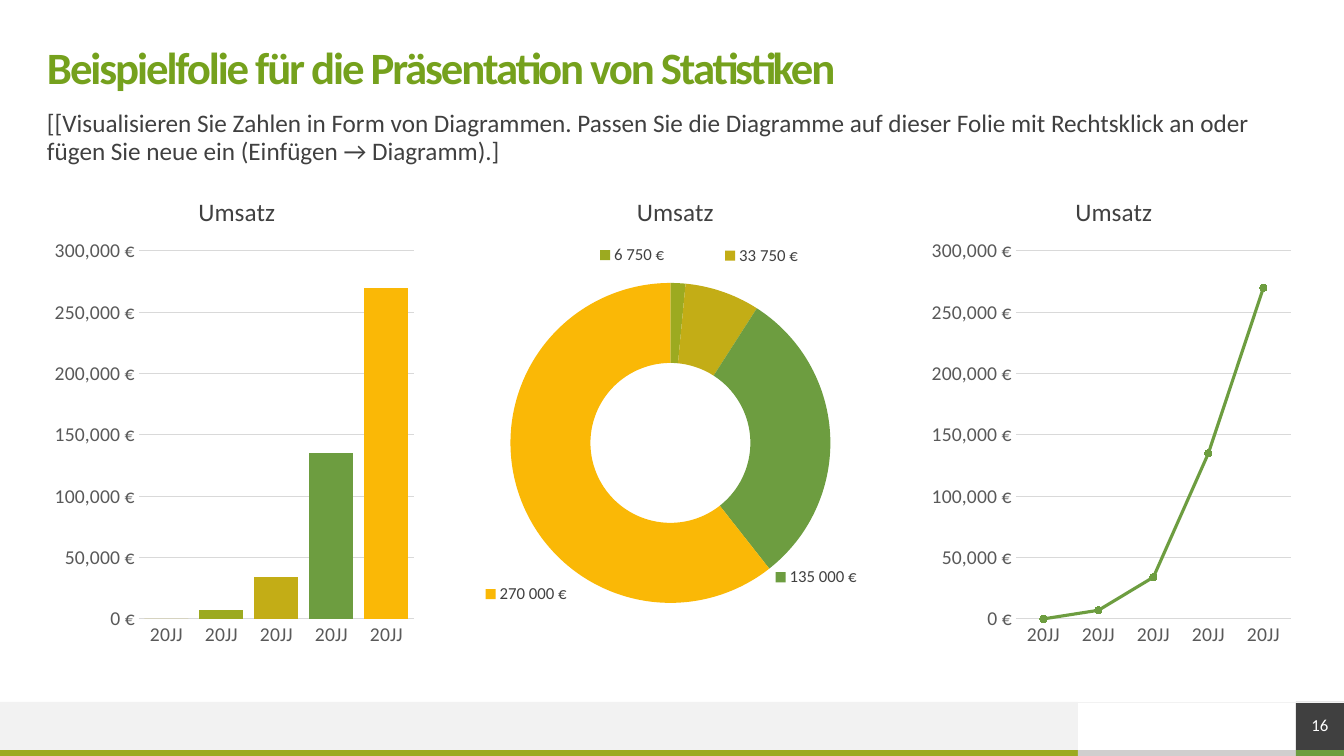
from lxml import etree
from pptx import Presentation
from pptx.chart.data import CategoryChartData
from pptx.dml.color import RGBColor
from pptx.enum.chart import XL_CHART_TYPE, XL_MARKER_STYLE, XL_TICK_MARK
from pptx.enum.shapes import MSO_CONNECTOR, MSO_SHAPE
from pptx.enum.text import MSO_ANCHOR, PP_ALIGN
from pptx.oxml import parse_xml
from pptx.oxml.ns import qn
from pptx.util import Pt

BAR = XL_CHART_TYPE.COLUMN_CLUSTERED
RING = XL_CHART_TYPE.DOUGHNUT
LINE = XL_CHART_TYPE.LINE_MARKERS_STACKED
NO_TICK = XL_TICK_MARK.NONE
CIRCLE = XL_MARKER_STYLE.CIRCLE
RECT = MSO_SHAPE.RECTANGLE
MIDDLE, TOP = MSO_ANCHOR.MIDDLE, MSO_ANCHOR.TOP
LEFT, CENTER = PP_ALIGN.LEFT, PP_ALIGN.CENTER

TITLE = RGBColor(0x75, 0xA1, 0x1D)
DARK = RGBColor(0x40, 0x40, 0x40)
AXIS = RGBColor(0x59, 0x59, 0x59)
GRID = RGBColor(0xD9, 0xD9, 0xD9)
PALE = RGBColor(0xF2, 0xF2, 0xF2)
GREY = RGBColor(0xD0, 0xCE, 0xCE)
WHITE = RGBColor(0xFF, 0xFF, 0xFF)
OLIVE = RGBColor(0xC3, 0xAD, 0x16)
LIME = RGBColor(0x9C, 0xAA, 0x20)
GREEN = RGBColor(0x6D, 0x9D, 0x40)
GOLD = RGBColor(0xFA, 0xB8, 0x06)

FONT = "Calibri"
HEAD = "Beispielfolie für die Präsentation von Statistiken"
BODY = ("[[Visualisieren Sie Zahlen in Form von Diagrammen. Passen Sie die "
        "Diagramme auf dieser Folie mit Rechtsklick an oder fügen Sie neue "
        "ein (Einfügen → Diagramm).]")
PAGE = "16"
NAME = "Umsatz"
YEARS = ["20JJ"] * 5
SALES = [0, 7000, 34000, 135000, 270000]
PARTS = [0, 6750, 33750, 135000, 270000]
SHADES = [OLIVE, LIME, OLIVE, GREEN, GOLD]
AXIS_FORM = r"#,##0\ [$€-407]"
PART_FORM = r"#\ ##0\ [$€-407]"

# All lengths are px
WIDE, HIGH = 1344, 756
EDGE, CHART_TOP, CHART_W, CHART_H = 47, 166, 374, 490
STEP = 438.5
TITLE_AT = (147, 24)
PLOT = (92, 85, 275, 368)
RING_PLOT = (25, 117, 320, 320)
SHIFTS = {1: (-44, -68), 2: (52, -74), 3: (26, 140), 4: (-31, 112)}
FOOT = [
    (0, 702, 1078, 48, PALE),
    (0, 750, 1078, 6, LIME),
    (1078, 750, 218, 6, GREY),
    (1296, 750, 48, 6, GREEN),
    (1296, 702, 48, 48, DARK),
]
SCALE = 914400 / 100.8


def emu(*lengths):
    return [round(n * SCALE) for n in lengths]


def style(font, size, color, bold=False):
    font.name, font.size, font.bold = FONT, Pt(size), bold
    font.color.rgb = color


def paint(part, color):
    part.fill.solid()
    part.fill.fore_color.rgb = color


def write(shape, text, size, color, bold=False, anchor=TOP, align=LEFT):
    frame = shape.text_frame
    frame.word_wrap = True
    frame.vertical_anchor = anchor
    frame.margin_left = frame.margin_right = 0
    frame.margin_top = frame.margin_bottom = 0
    frame.text = text
    para = frame.paragraphs[0]
    para.alignment = align
    para.line_spacing = 0.9
    style(para.runs[0].font, size, color, bold)
    return para.runs[0]


def place(parent, index, box, inner=False):
    """Give a chart part a manual layout from px inside the chart."""
    for old in parent.findall(qn("c:layout")):
        parent.remove(old)
    layout = etree.Element(qn("c:layout"))
    manual = etree.SubElement(layout, qn("c:manualLayout"))
    pairs = [("layoutTarget", "inner")] if inner else []
    if parent.tag != qn("c:dLbl"):
        pairs += [("xMode", "edge"), ("yMode", "edge")]
    sides = (CHART_W, CHART_H) * 2
    pairs += [(key, f"{n / side:.4f}") for key, n, side in zip("xywh", box, sides)]
    for key, val in pairs:
        etree.SubElement(manual, qn("c:" + key)).set("val", val)
    parent.insert(index, layout)


def add_chart(slide, column, kind, names, values, plot):
    data = CategoryChartData()
    data.categories = names
    data.add_series(NAME, values)
    box = emu(EDGE + column * STEP, CHART_TOP, CHART_W, CHART_H)
    chart = slide.shapes.add_chart(kind, *box, data).chart
    chart.font.name, chart.font.size = FONT, Pt(10)
    chart.has_legend = False
    chart.has_title = True
    title = chart.chart_title
    title.text_frame.text = NAME
    style(title.text_frame.paragraphs[0].runs[0].font, 18, DARK)
    place(title._element, 1, TITLE_AT)
    place(chart._chartSpace.chart.plotArea, 0, plot, True)
    return chart


def style_axes(chart):
    cat, val = chart.category_axis, chart.value_axis
    for axis in (cat, val):
        axis.major_tick_mark = axis.minor_tick_mark = NO_TICK
        style(axis.tick_labels.font, 14, AXIS)
    val.minimum_scale, val.maximum_scale, val.major_unit = 0, 300000, 50000
    val.tick_labels.number_format = AXIS_FORM
    val.tick_labels.number_format_is_linked = False
    val.format.line.fill.background()
    val.has_major_gridlines = True
    for line in (cat.format.line, val.major_gridlines.format.line):
        line.color.rgb, line.width = GRID, Pt(0.75)


def shade(series):
    for i, color in enumerate(SHADES):
        paint(series.points[i].format, color)


def label_ring(series):
    labels = series.data_labels
    labels.show_value = True
    labels.number_format, labels.number_format_is_linked = PART_FORM, False
    style(labels.font, 12, DARK)
    root = labels._element
    for lead in root.findall(qn("c:showLeaderLines")):
        lead.set("val", "0")
    space = 'xmlns:c="http://schemas.openxmlformats.org/drawingml/2006/chart"'
    text = etree.tostring(root.find(qn("c:txPr")), encoding="unicode")
    rest = "".join(f'<c:show{key} val="0"/>'
                   for key in ("CatName", "SerName", "Percent", "BubbleSize"))
    root.insert(0, parse_xml(
        f'<c:dLbl {space}><c:idx val="0"/><c:delete val="1"/></c:dLbl>'))
    for i, shift in SHIFTS.items():
        label = parse_xml(
            f'<c:dLbl {space}><c:idx val="{i}"/>'
            f'<c:numFmt formatCode="{PART_FORM}" sourceLinked="0"/>{text}'
            f'<c:showLegendKey val="1"/><c:showVal val="1"/>{rest}</c:dLbl>')
        place(label, 1, shift)
        root.insert(i, label)


def main():
    deck = Presentation()
    deck.slide_width, deck.slide_height = emu(WIDE, HIGH)
    slide = deck.slides.add_slide(deck.slide_layouts[6])
    shapes = slide.shapes

    for *box, color in FOOT:
        block = shapes.add_shape(RECT, *emu(*box))
        block.shadow.inherit = False
        paint(block, color)
        block.line.fill.background()
    write(block, PAGE, 12, WHITE, anchor=MIDDLE, align=CENTER)
    rule = shapes.add_connector(MSO_CONNECTOR.STRAIGHT, *emu(WIDE, 702, 0, 702))
    rule.line.color.rgb, rule.line.width = PALE, Pt(0.5)
    etree.SubElement(rule._element.spPr, qn("a:effectLst"))

    head = shapes.add_textbox(*emu(EDGE, 47, 1249, 47))
    run = write(head, HEAD, 32, TITLE, bold=True, anchor=MIDDLE)
    run.font._element.set("spc", "-150")
    write(shapes.add_textbox(*emu(EDGE, 111, 1250, 39)), BODY, 18, DARK)

    bars = add_chart(slide, 0, BAR, YEARS, SALES, PLOT)
    style_axes(bars)
    bars.plots[0].gap_width = 25
    bars.plots[0].vary_by_categories = False
    paint(bars.series[0].format, OLIVE)
    shade(bars.series[0])

    ring = add_chart(slide, 1, RING, "12345", PARTS, RING_PLOT)
    ring.plots[0].vary_by_categories = True
    shade(ring.series[0])
    label_ring(ring.series[0])

    curve = add_chart(slide, 2, LINE, YEARS, SALES, PLOT)
    style_axes(curve)
    curve.plots[0].vary_by_categories = False
    trend = curve.series[0]
    trend.smooth = False
    trend.format.line.color.rgb, trend.format.line.width = GREEN, Pt(2.25)
    trend.marker.style, trend.marker.size = CIRCLE, 5
    paint(trend.marker.format, GREEN)
    trend.marker.format.line.color.rgb = GREEN

    deck.save("out.pptx")


if __name__ == "__main__":
    main()
